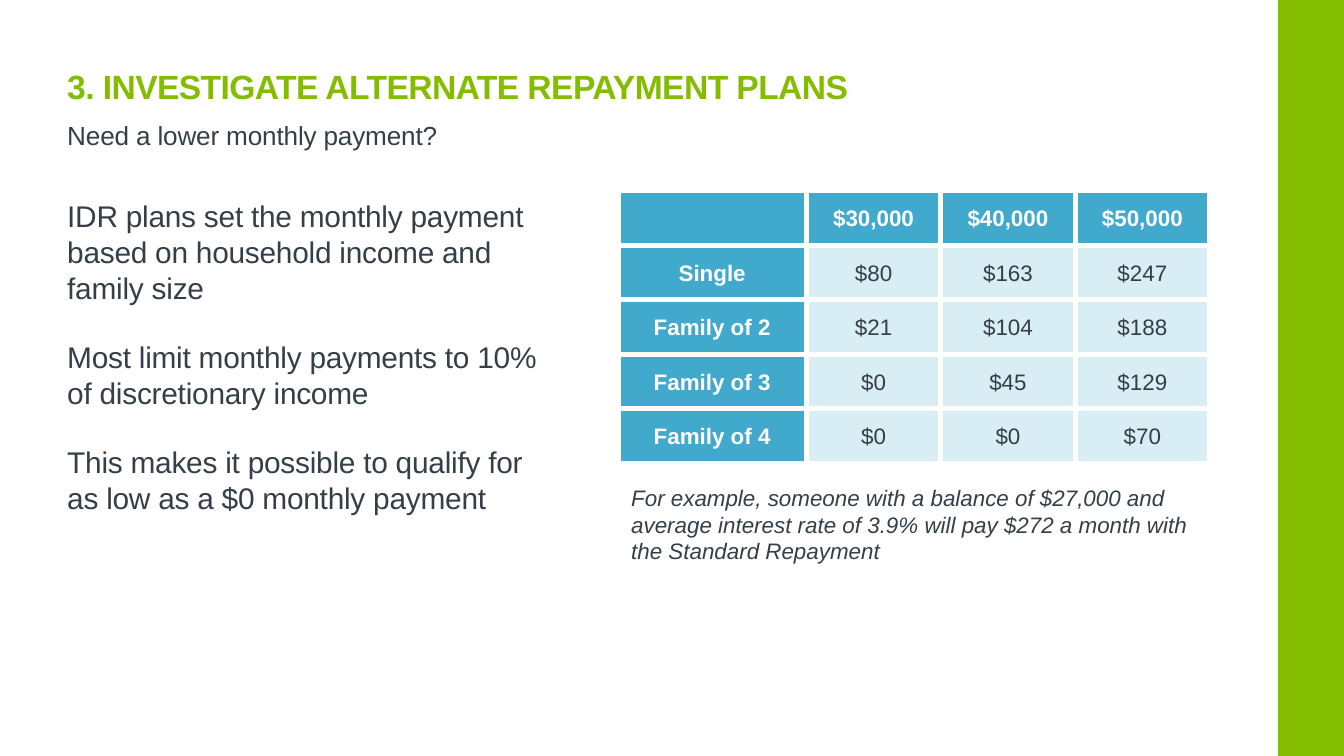
"""Build the slide on alternate repayment plans with its payment table."""
from dataclasses import dataclass

from lxml.etree import SubElement
from pptx import Presentation
from pptx.dml.color import RGBColor
from pptx.enum.shapes import MSO_SHAPE
from pptx.enum.text import MSO_ANCHOR, MSO_AUTO_SIZE, PP_ALIGN
from pptx.oxml import parse_xml
from pptx.oxml.ns import nsdecls, qn
from pptx.util import Cm, Pt


@dataclass(frozen=True)
class Theme:
    font: str = "Arial"
    green: str = "84BD00"
    blue: str = "41A9CC"
    ink: str = "353F49"
    white: str = "FFFFFF"
    title: int = 18
    body: int = 16
    lead: int = 14
    small: int = 12
    tint: int = 20000


@dataclass(frozen=True)
class Box:
    left: float
    top: float
    width: float
    height: float


@dataclass(frozen=True)
class Style:
    size: int
    color: str
    bold: bool = False
    italic: bool = False
    spacing: int = 0


T = Theme()
TITLE = Style(T.title, T.green, bold=True, spacing=-30)
BODY = Style(T.body, T.ink, spacing=-10)
LEAD = Style(T.lead, T.ink, spacing=-10)
NOTE = Style(T.small, T.ink, italic=True)
HEAD = Style(T.small, T.white, bold=True)
CELL = Style(T.small, T.ink)

PLAN_POINTS = [
    "IDR plans set the monthly payment based on household income and family size",
    "Most limit monthly payments to 10% of discretionary income",
    "This makes it possible to qualify for as low as a $0 monthly payment",
]
PAYMENTS = [
    ["", "$30,000", "$40,000", "$50,000"],
    ["Single", "$80", "$163", "$247"],
    ["Family of 2", "$21", "$104", "$188"],
    ["Family of 3", "$0", "$45", "$129"],
    ["Family of 4", "$0", "$0", "$70"],
]
EXAMPLE = ("For example, someone with a balance of $27,000 and average interest rate "
           "of 3.9% will pay $272 a month with the Standard Repayment")


def set_all(obj, values: dict) -> None:
    """Set each named attribute of an object."""
    for name, value in values.items():
        setattr(obj, name, value)


def place(sp, box: Box) -> None:
    """Move and size a shape."""
    set_all(sp, {k: Cm(getattr(box, k)) for k in ("left", "top", "width", "height")})


def write(p, text: str, style: Style) -> None:
    """Put one styled run in a paragraph."""
    r = p.add_run()
    r.text = text
    set_all(r.font, {"name": T.font, "size": Pt(style.size),
                     "bold": style.bold, "italic": style.italic})
    r.font.color.rgb = RGBColor.from_string(style.color)
    if style.spacing:
        r.font._element.set("spc", str(style.spacing))


def fill_placeholder(sp, box: Box, lines: list[str], style: Style, anchor=MSO_ANCHOR.TOP) -> None:
    """Place a placeholder and fill it with unbulleted paragraphs."""
    place(sp, box)
    tf = sp.text_frame
    set_all(tf, {"word_wrap": True, "auto_size": MSO_AUTO_SIZE.NONE, "vertical_anchor": anchor,
                 "margin_left": 0, "margin_right": Cm(0.25),
                 "margin_top": Cm(0.13), "margin_bottom": Cm(0.13)})
    for i, line in enumerate(lines):
        p = tf.add_paragraph() if i else tf.paragraphs[0]
        pPr = p._p.get_or_add_pPr()
        set_all(p, {"alignment": PP_ALIGN.LEFT, "space_before": Pt(6 if i else 0),
                    "space_after": Pt(12 if len(lines) > 1 else 0)})
        pPr.set("marL", "0")
        pPr.set("indent", "0")
        SubElement(pPr, qn("a:buNone"))
        write(p, line, style)


def format_cell(cell, text: str, is_head: bool) -> None:
    """Fill, border and write one table cell."""
    set_all(cell, {"vertical_anchor": MSO_ANCHOR.MIDDLE, "margin_left": Cm(0.18),
                   "margin_right": Cm(0.18), "margin_top": 0, "margin_bottom": 0})
    cell.fill.solid()
    cell.fill.fore_color.rgb = RGBColor.from_string(T.blue)
    tcPr = cell._tc.get_or_add_tcPr()
    if not is_head:
        color = tcPr.find(".//" + qn("a:srgbClr"))
        SubElement(color, qn("a:alpha")).set("val", str(T.tint))
    for i, side in enumerate(("lnL", "lnR", "lnT", "lnB")):
        tcPr.insert(i, parse_xml(
            f'<a:{side} {nsdecls("a")} w="{Pt(3)}"><a:solidFill>'
            f'<a:srgbClr val="{T.white}"/></a:solidFill></a:{side}>'))
    p = cell.text_frame.paragraphs[0]
    set_all(p, {"alignment": PP_ALIGN.CENTER, "line_spacing": 1.07})
    if text:
        write(p, text, HEAD if is_head else CELL)


def add_payments(s, box: Box, rows: list[list[str]]) -> None:
    """Add the table of monthly payments by income and family size."""
    dims = [Cm(v) for v in (box.left, box.top, box.width, box.height)]
    table = s.shapes.add_table(len(rows), len(rows[0]), *dims).table
    set_all(table, {"first_row": False, "horz_banding": False})
    for i, col in enumerate(table.columns):
        col.width = Cm(2.54 if i else 3.56)
    for y, row in enumerate(rows):
        for x, text in enumerate(row):
            format_cell(table.cell(y, x), text, x == 0 or y == 0)


def add_bar(s, box: Box) -> None:
    """Add the green side bar."""
    sp = s.shapes.add_shape(MSO_SHAPE.RECTANGLE, 0, 0, 0, 0)
    place(sp, box)
    sp.shadow.inherit = False
    sp.fill.solid()
    sp.fill.fore_color.rgb = RGBColor.from_string(T.green)
    sp.line.fill.background()


def add_note(s, box: Box, text: str) -> None:
    """Add the worked example below the table."""
    sp = s.shapes.add_textbox(0, 0, 0, 0)
    place(sp, box)
    sp.text_frame.word_wrap = True
    write(sp.text_frame.paragraphs[0], text, NOTE)


def main() -> None:
    """Build and save the slide."""
    prs = Presentation()
    set_all(prs, {"slide_width": Cm(25.4), "slide_height": Cm(14.29)})
    s = prs.slides.add_slide(prs.slide_layouts[3])
    title, points, lead = s.placeholders
    add_bar(s, Box(24.15, 0, 1.25, 14.29))
    fill_placeholder(title, Box(1.27, 0.13, 21.59, 2),
                     ["3. INVESTIGATE ALTERNATE REPAYMENT PLANS"], TITLE, MSO_ANCHOR.BOTTOM)
    fill_placeholder(points, Box(1.27, 3.61, 9.58, 9.14), PLAN_POINTS, BODY)
    fill_placeholder(lead, Box(1.27, 2.13, 21.59, 0.89), ["Need a lower monthly payment?"], LEAD)
    add_payments(s, Box(11.68, 3.61, 11.18, 5.15), PAYMENTS)
    add_note(s, Box(11.68, 9.02, 11.18, 1.8), EXAMPLE)
    prs.save("out.pptx")


if __name__ == "__main__":
    main()
